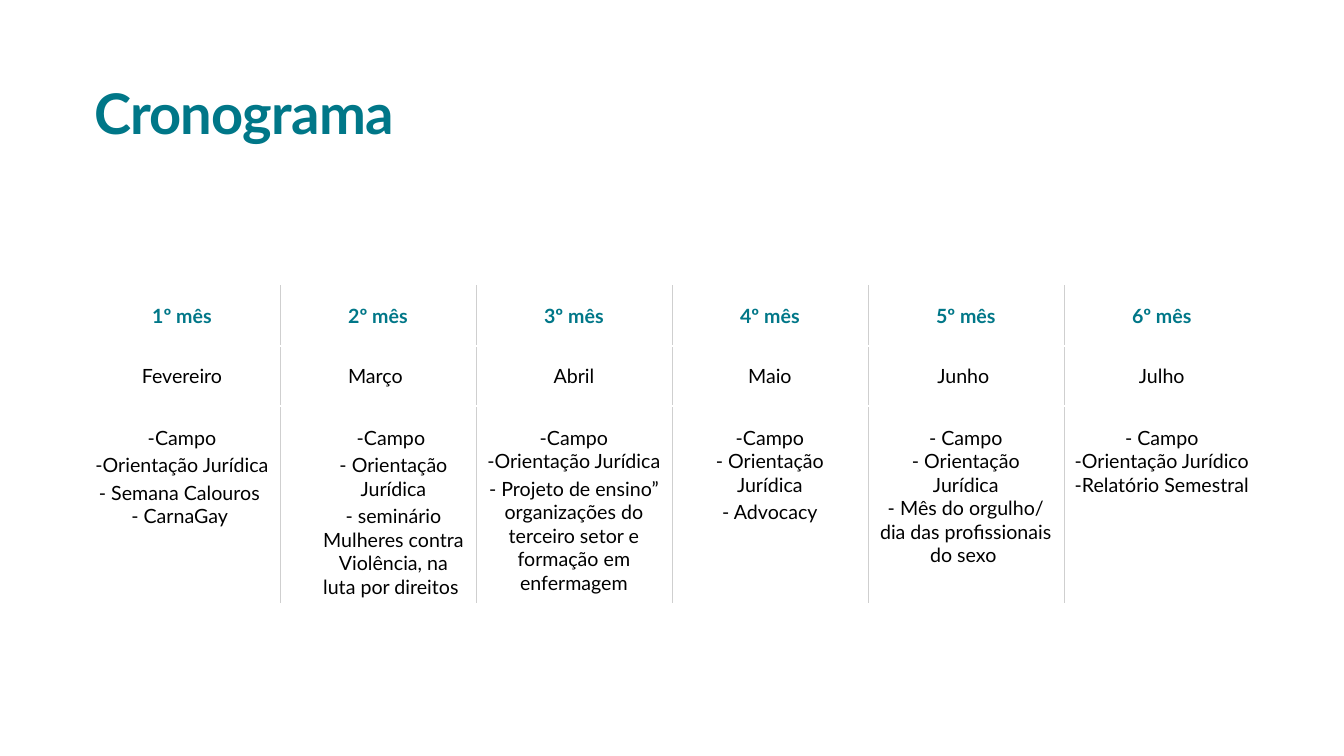
from dataclasses import dataclass

from lxml.etree import SubElement
from pptx import Presentation
from pptx.dml.color import RGBColor
from pptx.enum.text import MSO_ANCHOR, MSO_AUTO_SIZE, PP_ALIGN
from pptx.oxml import parse_xml
from pptx.oxml.ns import nsdecls, qn
from pptx.util import Pt

TITLE = "Cronograma"
MONTHS = [
    ("1º mês", "Fevereiro", [
        ["-Campo"],
        ["-Orientação Jurídica "],
        ["- Semana Calouros ", "- CarnaGay "],
    ]),
    ("2º mês", "Março ", [
        ["-Campo "],
        ["- Orientação Jurídica"],
        ["- seminário Mulheres contra Violência, na luta por direitos "],
    ]),
    ("3º mês", "Abril", [
        ["-Campo", "-Orientação Jurídica"],
        ["- Projeto de ensino” organizações do terceiro setor e formação em enfermagem"],
    ]),
    ("4º mês", "Maio", [
        ["-Campo", "- Orientação Jurídica"],
        ["- Advocacy"],
    ]),
    ("5º mês", "Junho ", [
        ["- Campo", "- Orientação Jurídica", "- Mês do orgulho/ dia das profissionais do sexo "],
    ]),
    ("6º mês", "Julho", [
        ["- Campo", "-Orientação Jurídico", "-Relatório Semestral "],
    ]),
]
INDENTED_COLUMN = 1


@dataclass(frozen=True)
class Theme:
    font: str = "Lato"
    teal: str = "007788"
    black: str = "000000"
    rule: str = "CFCFCF"
    title_size: int = 40
    body_size: int = 14
    paragraph_gap: float = 2.8
    rule_width: float = 0.5
    title_spacing: float = -0.5


THEME = Theme()
EMU_PER_PX = 914400 / 100.8
SLIDE_WIDTH, SLIDE_HEIGHT = 1344, 756
LEFT, WIDTH = 84, 1176
TITLE_TOP, TITLE_HEIGHT = 79, 67
TABLE_TOP = 286
ROW_HEIGHTS = (60, 60, 198)
COLUMN_WIDTH = WIDTH // len(MONTHS)
SIDE_MARGIN, EDGE_MARGIN, TASK_TOP_MARGIN, TASK_INDENT = 10, 5, 20, 31


def px(length):
    return round(length * EMU_PER_PX)


def add_run(paragraph, text, size, color, bold):
    run = paragraph.add_run()
    run.text = text
    run.font.name = THEME.font
    run.font.size = Pt(size)
    run.font.bold = bold
    run.font.color.rgb = RGBColor.from_string(color)
    return run


def add_title(slide):
    title = slide.shapes.title
    title.left, title.top = px(LEFT), px(TITLE_TOP)
    title.width, title.height = px(WIDTH), px(TITLE_HEIGHT)
    frame = title.text_frame
    frame.word_wrap = True
    frame.auto_size = MSO_AUTO_SIZE.NONE
    frame.vertical_anchor = MSO_ANCHOR.BOTTOM
    frame.margin_left = frame.margin_right = px(SIDE_MARGIN)
    frame.margin_top = frame.margin_bottom = 0
    paragraph = frame.paragraphs[0]
    paragraph.alignment = PP_ALIGN.LEFT
    run = add_run(paragraph, TITLE, THEME.title_size, THEME.teal, True)
    run.font._element.set("spc", str(round(THEME.title_spacing * 100)))


def add_rules(cell, sides):
    properties = cell._tc.get_or_add_tcPr()
    for position, side in enumerate(sides):
        line = parse_xml(f'<a:{side} {nsdecls("a")} w="{Pt(THEME.rule_width)}"/>')
        fill = SubElement(line, qn("a:solidFill"))
        SubElement(fill, qn("a:srgbClr"), val=THEME.rule)
        properties.insert(position, line)


def fill_cell(cell, paragraphs, color, bold):
    cell.fill.background()
    cell.margin_left = cell.margin_right = px(SIDE_MARGIN)
    cell.margin_top = cell.margin_bottom = px(EDGE_MARGIN)
    cell.vertical_anchor = MSO_ANCHOR.MIDDLE
    frame = cell.text_frame
    for index, lines in enumerate(paragraphs):
        paragraph = frame.add_paragraph() if index else frame.paragraphs[0]
        paragraph.alignment = PP_ALIGN.CENTER
        if index:
            paragraph.space_before = Pt(THEME.paragraph_gap)
        for number, line in enumerate(lines):
            if number:
                paragraph.add_line_break()
            add_run(paragraph, line, THEME.body_size, color, bold)


def add_schedule(slide):
    table = slide.shapes.add_table(
        len(ROW_HEIGHTS), len(MONTHS), px(LEFT), px(TABLE_TOP), px(WIDTH), px(sum(ROW_HEIGHTS))
    ).table
    table.first_row = table.horz_banding = False
    for row, height in zip(table.rows, ROW_HEIGHTS):
        row.height = px(height)
    for column, (number, month, tasks) in enumerate(MONTHS):
        table.columns[column].width = px(COLUMN_WIDTH)
        header, name, task_cell = (table.cell(row, column) for row in range(len(ROW_HEIGHTS)))
        fill_cell(header, [[number]], THEME.teal, True)
        fill_cell(name, [[month]], THEME.black, False)
        fill_cell(task_cell, tasks, THEME.black, False)
        task_cell.vertical_anchor = MSO_ANCHOR.TOP
        task_cell.margin_top = px(TASK_TOP_MARGIN)
        if column == INDENTED_COLUMN:
            task_cell.margin_left = px(SIDE_MARGIN + TASK_INDENT)
        sides = ["lnL"] * (column > 0) + ["lnR"] * (column < len(MONTHS) - 1)
        for cell in (header, name, task_cell):
            add_rules(cell, sides)


def main():
    presentation = Presentation()
    presentation.slide_width, presentation.slide_height = px(SLIDE_WIDTH), px(SLIDE_HEIGHT)
    slide = presentation.slides.add_slide(presentation.slide_layouts[5])
    add_title(slide)
    add_schedule(slide)
    presentation.save("out.pptx")


if __name__ == "__main__":
    main()
